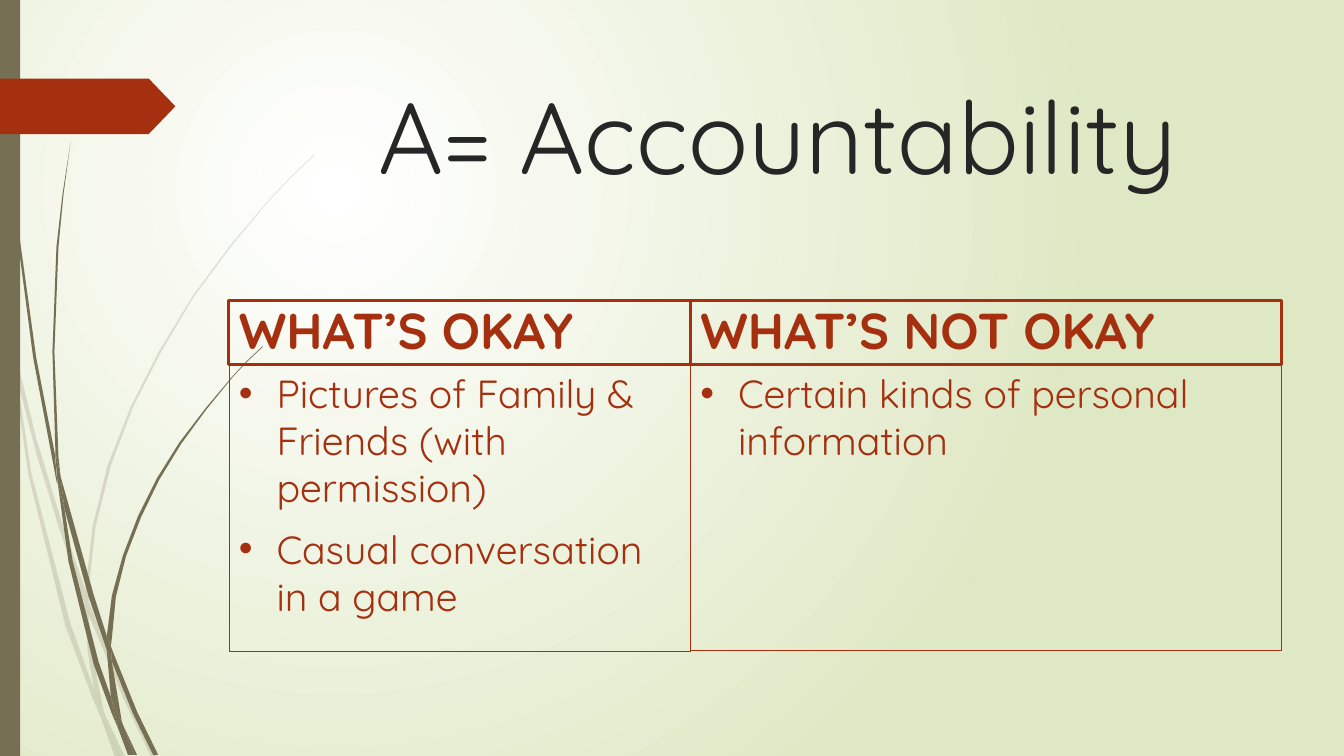
import pptx
import pptx.util
import pptx.dml.color
import pptx.enum.shapes
import pptx.enum.text
import pptx.oxml
import pptx.oxml.ns

Cm = pptx.util.Cm
Pt = pptx.util.Pt
RGBColor = pptx.dml.color.RGBColor
SHAPE = pptx.enum.shapes.MSO_SHAPE
ANCHOR = pptx.enum.text.MSO_ANCHOR
ALIGN = pptx.enum.text.PP_ALIGN
qn = pptx.oxml.ns.qn

WHITE = RGBColor(0xFF, 0xFF, 0xFF)
LIME = RGBColor(0xDF, 0xE8, 0xC4)
OLIVE = RGBColor(0x76, 0x6F, 0x54)
RUST = RGBColor(0xA5, 0x30, 0x10)
INK = RGBColor(0x26, 0x26, 0x26)
FONT = "Quicksand"
UNIT = 2.54  # cm in one unit of the grass outlines

# Grass outlines, each a closed run of corners
PALE = [
    [(.11, 3.5), (.09, 3.22), (0, 2.82), (0, 2.99), (.1, 3.44)],
    [(.58, 5.22), (.84, 5.99), (.85, 5.86), (.62, 5.2), (.36, 4.35),
     (.14, 3.45), (.17, 3.76), (.36, 4.5)],
    [(.92, 6.07), (.88, 5.96), (.88, 6.1), (1.23, 6.94), (1.5, 7.51),
     (1.55, 7.51), (1.27, 6.92)],
    [(1.19, 7.51), (1.24, 7.51), (1.05, 7.11)],
    [(.93, 6.83), (.7, 6.19), (.31, 4.69), (.17, 3.76), (.11, 3.5),
     (.28, 4.7), (.65, 6.21), (.92, 6.93), (1.01, 7.14), (.99, 7.07)],
    [(.84, 5.99), (.87, 6.46), (.93, 6.83), (.96, 6.92), (1.05, 7.11),
     (1.03, 7.06), (.91, 6.46), (.88, 6.1), (.88, 6.08)],
    [(.88, 5.84), (.95, 5.22), (1.1, 4.62), (1.32, 4.04), (1.6, 3.49),
     (1.92, 2.95), (2.29, 2.45), (2.68, 1.98), (2.9, 1.75), (3.12, 1.54),
     (3.12, 1.53), (2.89, 1.75), (2.68, 1.97), (2.28, 2.44), (1.91, 2.94),
     (1.58, 3.48), (1.3, 4.03), (1.07, 4.61), (.92, 5.22), (.85, 5.84),
     (.85, 5.86), (.88, 5.96)],
    [(1.01, 7.14), (1.14, 7.51), (1.19, 7.51)],
    [(.88, 6.08), (.88, 6.1), (.88, 5.96), (.85, 5.86), (.84, 5.99)],
    [(.96, 6.92), (.93, 6.83), (.99, 7.07), (1.01, 7.14), (1.19, 7.51),
     (1.05, 7.11)],
]
DARK = [
    [(.07, 1.1), (.17, 2.33), (.33, 3.55), (.56, 4.77), (.57, 4.81),
     (.55, 4.57), (.55, 4.53), (.36, 3.55), (.19, 2.32), (.08, 1.09),
     (.05, .48), (.04, 0), (.03, 0), (.04, .48)],
    [(.88, 5.92), (1.06, 6.45), (1.06, 6.33), (1.06, 6.31), (.93, 5.9),
     (.6, 4.72), (.64, 5.05)],
    [(1.13, 6.49), (1.1, 6.41), (1.11, 6.56), (1.32, 7.08), (1.52, 7.49),
     (1.57, 7.49), (1.36, 7.06)],
    [(1.1, 6.91), (.98, 6.57), (.72, 5.56), (.64, 5.05), (.57, 4.77),
     (.68, 5.57), (.93, 6.59), (1.11, 7.08), (1.17, 7.22), (1.16, 7.17)],
    [(.6, 4.72), (.58, 4.53), (.54, 3.49), (.58, 2.45), (.63, 1.93),
     (.7, 1.41), (.62, 1.93), (.56, 2.45), (.52, 3.49), (.55, 4.49)],
    [(1.33, 7.49), (1.36, 7.49), (1.22, 7.19)],
    [(.57, 4.77), (.64, 5.05), (.6, 4.72), (.55, 4.49), (.55, 4.53)],
    [(1.11, 6.33), (1.15, 5.92), (1.25, 5.52), (1.4, 5.13), (1.58, 4.76),
     (1.8, 4.4), (2.05, 4.06), (2.31, 3.74), (2.45, 3.59), (2.61, 3.44),
     (2.6, 3.44), (2.45, 3.58), (2.31, 3.73), (2.04, 4.05), (1.78, 4.39),
     (1.56, 4.74), (1.37, 5.12), (1.22, 5.51), (1.11, 5.91), (1.06, 6.31),
     (1.1, 6.41)],
    [(1.17, 7.22), (1.27, 7.49), (1.31, 7.49)],
    [(1.06, 6.45), (1.1, 6.91), (1.16, 7.06), (1.22, 7.19), (1.21, 7.16),
     (1.11, 6.56), (1.09, 6.51)],
    [(1.06, 6.45), (1.09, 6.51), (1.11, 6.56), (1.1, 6.41), (1.06, 6.31),
     (1.06, 6.33)],
    [(1.16, 7.06), (1.1, 6.91), (1.16, 7.17), (1.17, 7.22), (1.3, 7.49),
     (1.33, 7.49), (1.22, 7.19)],
]

# Columns: left, width, body line, heading, points
COLS = [
    (5.77, 11.63, .25, "WHAT’S OKAY",
     ["Pictures of Family & Friends (with permission)",
      "Casual conversation in a game"]),
    (17.4, 14.9, .75, "WHAT’S NOT OKAY",
     ["Certain kinds of personal information"]),
]
TOP, HEAD, BODY = 7.58, 1.61, 7.21


def paint(shape, color):
    shape.shadow.inherit = False
    shape.fill.solid()
    shape.fill.fore_color.rgb = color
    shape.line.fill.background()


def add_back(slide):
    fill = slide.background.fill
    fill.gradient()
    for stop, color, pos in zip(fill.gradient_stops, (WHITE, LIME), (0, 1)):
        stop.color.rgb = color
        stop.position = pos
    lin = next(slide.element.iter(qn("a:lin")))
    glow = pptx.oxml.parse_xml(
        f'<a:path {pptx.oxml.ns.nsdecls("a")} path="circle"><a:fillToRect '
        'l="50000" t="50000" r="100000" b="100000"/></a:path>')
    lin.getparent().replace(lin, glow)


def add_blade(slide, knots, alpha=None):
    edge = [(Cm(x * UNIT), Cm(y * UNIT)) for x, y in knots]
    pen = slide.shapes.build_freeform(*edge[0])
    pen.add_line_segments(edge[1:], close=True)
    blade = pen.convert_to_shape()
    paint(blade, OLIVE)
    if alpha:
        color = next(blade.element.spPr.iter(qn("a:srgbClr")))
        color.append(pptx.oxml.parse_xml(
            f'<a:alpha {pptx.oxml.ns.nsdecls("a")} val="{alpha * 1000}"/>'))


def add_block(slide, kind, box, color):
    block = slide.shapes.add_shape(kind, *map(Cm, box))
    paint(block, color)
    return block


def style(para, size, color, bold=False):
    for run in para.runs:
        run.font.name = FONT
        run.font.size = Pt(size)
        run.font.bold = bold
        run.font.color.rgb = color


def add_title(slide, text):
    frame = slide.shapes.add_textbox(
        Cm(7.21), Cm(1.73), Cm(24.77), Cm(3.56)).text_frame
    frame.word_wrap = True
    frame.vertical_anchor = ANCHOR.TOP
    frame.text = text
    frame.paragraphs[0].alignment = ALIGN.CENTER
    style(frame.paragraphs[0], 72, INK)


def add_cell(slide, box, line, lines, size, anchor, bold=False):
    cell = slide.shapes.add_shape(SHAPE.RECTANGLE, *map(Cm, box))
    cell.shadow.inherit = False
    cell.fill.background()
    cell.line.color.rgb = RUST
    cell.line.width = Pt(line)
    frame = cell.text_frame
    frame.word_wrap = True
    frame.vertical_anchor = anchor
    frame.text = "\n".join(lines)
    for para in frame.paragraphs:
        para.alignment = ALIGN.LEFT
        para.space_before = Pt(10)
        style(para, size, RUST, bold)
    return frame


def add_dots(frame):
    for para in frame.paragraphs:
        props = para._p.get_or_add_pPr()
        props.set("marL", str(Cm(.95)))
        props.set("indent", str(-Cm(.95)))
        for tag, key, val in (("buFont", "typeface", "Arial"),
                              ("buChar", "char", "•")):
            props.append(pptx.oxml.parse_xml(
                f'<a:{tag} {pptx.oxml.ns.nsdecls("a")} {key}="{val}"/>'))


def main():
    deck = pptx.Presentation()
    deck.slide_width, deck.slide_height = Cm(33.87), Cm(19.05)
    slide = deck.slides.add_slide(deck.slide_layouts[6])

    # Backdrop
    add_back(slide)
    for blades, alpha in ((PALE, 20), (DARK, None)):
        for knots in blades:
            add_blade(slide, knots, alpha)
    add_block(slide, SHAPE.RECTANGLE, (0, 0, .51, 19.05), OLIVE)
    tag = add_block(slide, SHAPE.PENTAGON, (0, 1.98, 4.42, 1.4), RUST)
    tag.adjustments[0] = .48

    # Title and the two columns
    add_title(slide, "A= Accountability")
    for left, width, line, head, points in COLS:
        add_cell(slide, (left, TOP, width, HEAD), 2.25, [head], 36,
                 ANCHOR.BOTTOM, True)
        body = add_cell(slide, (left, TOP + HEAD, width, BODY), line, points,
                        28, ANCHOR.TOP)
        add_dots(body)

    deck.save("out.pptx")


if __name__ == "__main__":
    main()
